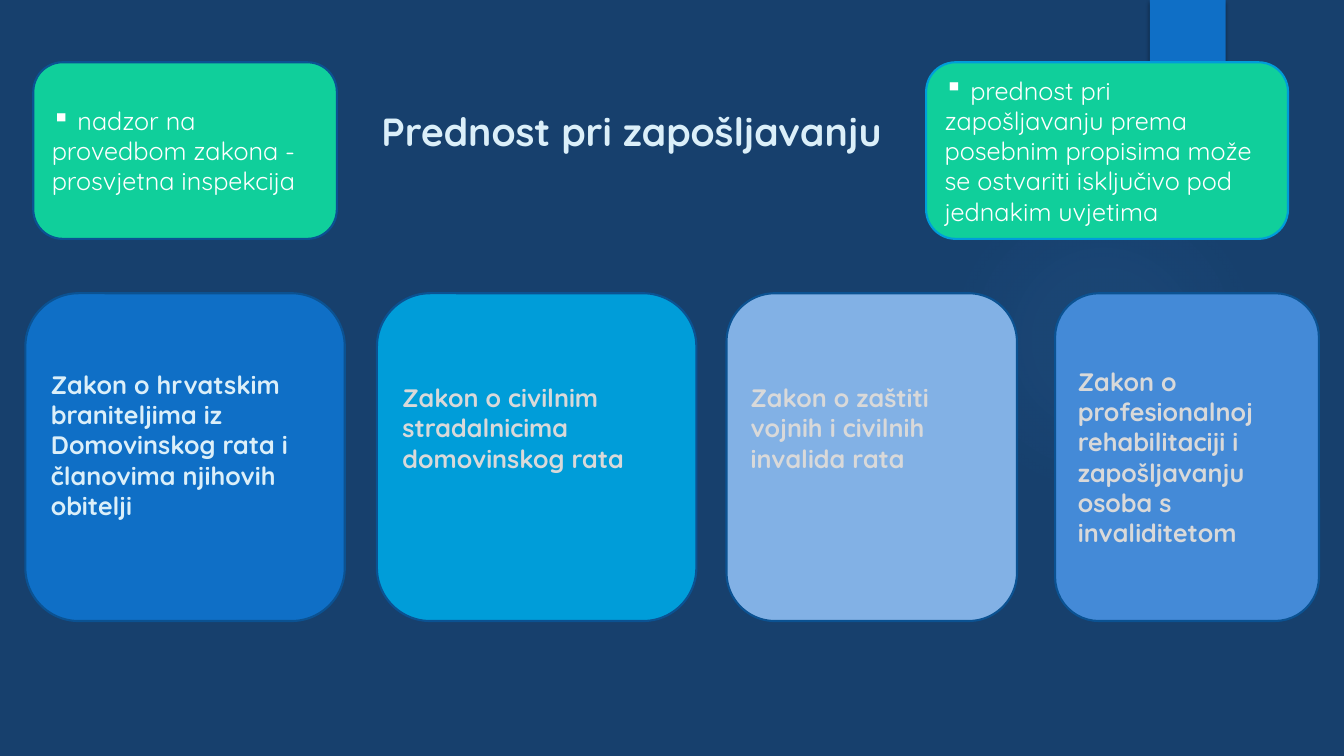
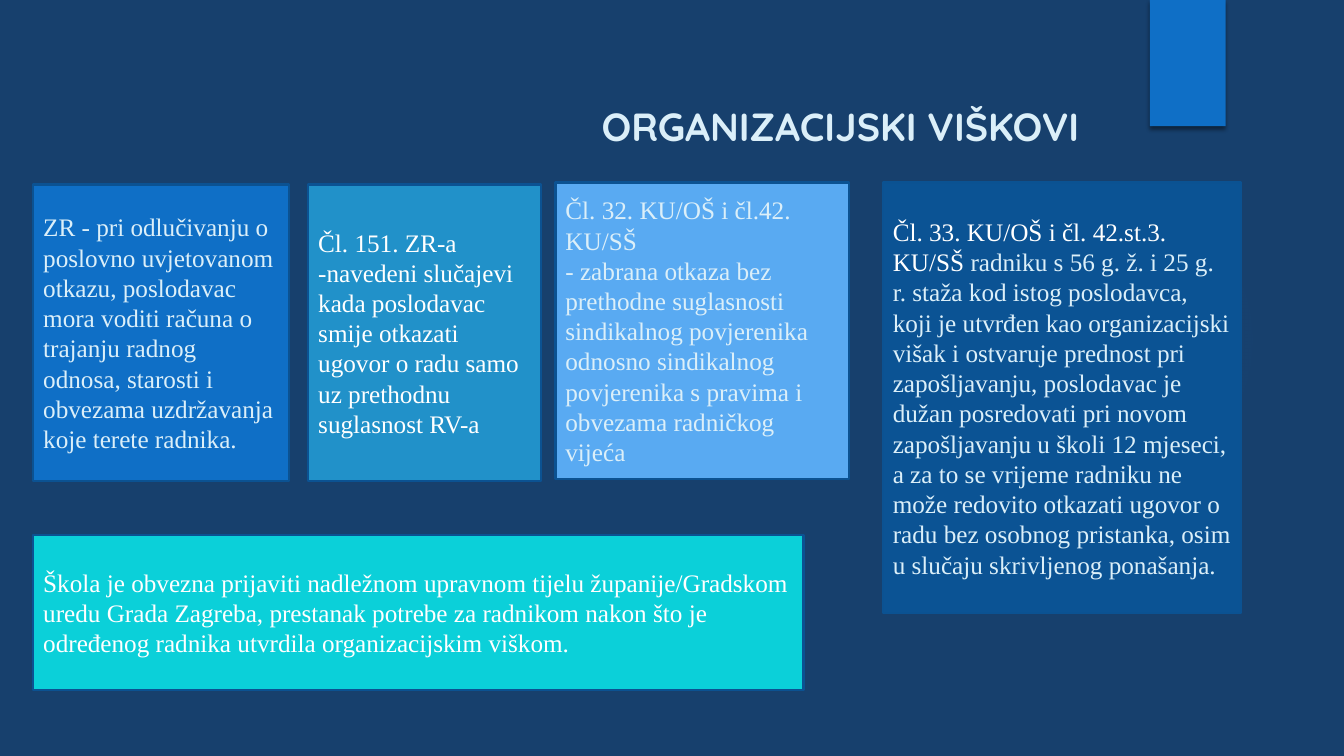
import pptx
import pptx.dml.color
import pptx.enum.shapes
import pptx.enum.text
import pptx.oxml
import pptx.oxml.ns
import pptx.util

Cm = pptx.util.Cm
Pt = pptx.util.Pt
Shapes = pptx.enum.shapes.MSO_SHAPE
Anchor = pptx.enum.text.MSO_ANCHOR
Align = pptx.enum.text.PP_ALIGN

COLOURS = {
    "night": "17406D", "blue": "0F6FC6", "edge": "0B5292", "cyan": "009DD9",
    "pale": "82B1E5", "medium": "448AD7", "green": "10CF9B", "ice": "DBEFF9",
    "grey": "D9D9D9", "white": "FFFFFF", "steel": "2191C9", "sky": "59AAF2",
    "deep": "0B5394", "turquoise": "0BD0D9",
}
TITLE = {"name": "Quicksand", "size": Pt(28), "bold": True}
NOTE = {"name": "Quicksand", "size": Pt(18), "bold": False}
LAW = {"name": "Quicksand", "size": Pt(18), "bold": True}
ARTICLE = {"name": "Times New Roman", "size": Pt(18), "bold": False}


class Deck:
    """Hold the shared style and the current slide."""

    def __init__(self):
        self.presentation = pptx.Presentation()
        self.presentation.slide_width = Cm(33.87)
        self.presentation.slide_height = Cm(19.05)
        self.paint(self.presentation.slide_master.background.fill, "night")
        self.slide = None

    def colour(self, name):
        return pptx.dml.color.RGBColor.from_string(COLOURS[name])

    def paint(self, fill, name):
        fill.solid()
        fill.fore_color.rgb = self.colour(name)

    def add_slide(self, title, position):
        layout = self.presentation.slide_layouts.get_by_name("Title Only")
        self.slide = self.presentation.slides.add_slide(layout)
        self.add_glow()
        self.add_tab()
        shape = self.slide.shapes.title
        for name, value in zip(("left", "top", "width", "height"), position):
            setattr(shape, name, Cm(value))
        frame = shape.text_frame
        frame.auto_size = pptx.enum.text.MSO_AUTO_SIZE.NONE
        frame.vertical_anchor = Anchor.TOP
        self.set_text(frame.paragraphs[0], [(title, "ice")], TITLE, Align.CENTER)

    def add_plain(self, kind, position):
        shape = self.slide.shapes.add_shape(kind, *map(Cm, position))
        shape.shadow.inherit = False
        shape.line.fill.background()
        return shape

    def add_glow(self):
        shape = self.add_plain(Shapes.OVAL, (23.9, 4.65, 7.82, 7.82))
        shape.fill.background()
        stops = "".join(
            f'<a:gs pos="{place}000"><a:srgbClr val="{COLOURS["medium"]}">'
            f'<a:alpha val="{alpha}000"/></a:srgbClr></a:gs>'
            for place, alpha in ((0, 7), (36, 6), (69, 0)))
        gradient = pptx.oxml.parse_xml(
            f'<a:gradFill {pptx.oxml.ns.nsdecls("a")}><a:gsLst>{stops}</a:gsLst>'
            '<a:path path="circle"><a:fillToRect l="50000" t="50000" r="50000" '
            'b="50000"/></a:path></a:gradFill>')
        properties = shape._element.spPr
        properties.replace(properties.find(pptx.oxml.ns.qn("a:noFill")), gradient)

    def add_tab(self):
        shape = self.add_plain(Shapes.RECTANGLE, (28.98, 0, 1.91, 3.18))
        self.paint(shape.fill, "blue")
        effects = shape._element.spPr.find(pptx.oxml.ns.qn("a:effectLst"))
        effects.append(pptx.oxml.parse_xml(
            f'<a:outerShdw {pptx.oxml.ns.nsdecls("a")} blurRad="{Pt(3)}" '
            f'dist="{Pt(2)}" dir="5400000" rotWithShape="0">'
            '<a:srgbClr val="000000"><a:alpha val="45000"/></a:srgbClr></a:outerShdw>'))

    def add_box(self, kind, position, fill, paragraphs, style,
                edge="edge", bullet=None, lift=0.13):
        shape = self.add_plain(kind, position)
        self.paint(shape.fill, fill)
        self.paint(shape.line.fill, edge)
        shape.line.width = Pt(1.5)
        frame = shape.text_frame
        settings = {"word_wrap": True, "vertical_anchor": Anchor.MIDDLE,
                    "margin_bottom": Cm(lift)}
        for name, value in settings.items():
            setattr(frame, name, value)
        for index, runs in enumerate(paragraphs):
            paragraph = frame.add_paragraph() if index else frame.paragraphs[0]
            self.set_text(paragraph, runs, style, Align.LEFT, bullet)

    def set_text(self, paragraph, runs, style, alignment, bullet=None):
        paragraph.alignment = alignment
        if bullet:
            properties = paragraph._p.get_or_add_pPr()
            properties.set("marL", "0")
            properties.set("indent", "0")
            properties.append(pptx.oxml.parse_xml(
                f'<a:buChar {pptx.oxml.ns.nsdecls("a")} char="{bullet}"/>'))
        for text, colour in runs:
            run = paragraph.add_run()
            run.text = text
            for name, value in style.items():
                setattr(run.font, name, value)
            run.font.color.rgb = self.colour(colour)


def build_priority(deck):
    """Build the slide on employment priority."""
    deck.add_slide("Prednost pri zapošljavanju", (3.48, 2.57, 24.87, 3.89))
    notes = (
        (0.84, 7.65, "edge", " nadzor na provedbom zakona - prosvjetna inspekcija"),
        (23.34, 9.12, "cyan", " prednost pri zapošljavanju prema posebnim propisima "
         "može se ostvariti isključivo pod jednakim uvjetima"),
    )
    for left, width, edge, text in notes:
        deck.add_box(Shapes.ROUNDED_RECTANGLE, (left, 1.57, width, 4.45), "green",
                     [[(text, "white")]], NOTE, edge=edge, bullet="▪")
    laws = (
        (0.64, 8.05, "blue", "ice", 0.75, "Zakon o hrvatskim braniteljima iz "
         "Domovinskog rata i članovima njihovih obitelji"),
        (9.5, 8.05, "cyan", "grey", 1.6,
         "Zakon o civilnim stradalnicima domovinskog rata"),
        (18.31, 7.32, "pale", "grey", 1.6,
         "Zakon o zaštiti vojnih i civilnih invalida rata"),
        (26.59, 6.65, "medium", "grey", 0.13, "Zakon o profesionalnoj "
         "rehabilitaciji i zapošljavanju osoba s invaliditetom"),
    )
    for left, width, fill, colour, lift, text in laws:
        deck.add_box(Shapes.ROUNDED_RECTANGLE, (left, 7.39, width, 8.26), fill,
                     [[(text, colour)]], LAW, lift=lift)


def build_redundancy(deck):
    """Build the slide on organisational redundancy."""
    deck.add_slide("ORGANIZACIJSKI VIŠKOVI", (12.68, 2.44, 17, 2.1))
    articles = (
        ((0.84, 4.65, 6.45, 7.47), "blue", [[(
            "ZR - pri odlučivanju o poslovno uvjetovanom otkazu, poslodavac mora "
            "voditi računa o trajanju radnog odnosa, starosti i obvezama "
            "uzdržavanja koje terete radnika.", "ice")]]),
        ((7.77, 4.65, 5.87, 7.47), "steel", [
            [("Čl. 151. ZR-a", "white")],
            [("-navedeni slučajevi kada poslodavac smije otkazati ugovor o radu "
              "samo uz prethodnu suglasnost RV-a", "white")]]),
        ((14, 4.6, 7.39, 7.47), "sky", [
            [("Čl. 32. KU/OŠ i čl.42. KU/SŠ", "ice")],
            [("- zabrana otkaza bez prethodne suglasnosti sindikalnog povjerenika "
              "odnosno sindikalnog povjerenika s pravima i obvezama radničkog "
              "vijeća", "ice")]]),
        ((22.25, 4.6, 9.02, 10.85), "deep", [[
            ("Čl. 33. KU/OŠ i čl. 42.st.3. KU/SŠ ", "white"),
            ("radniku s 56 g. ž. i 25 g. r. staža kod istog poslodavca, koji je "
             "utvrđen kao organizacijski višak i ostvaruje prednost pri "
             "zapošljavanju, poslodavac je dužan posredovati pri novom "
             "zapošljavanju u školi 12 mjeseci, a za to se vrijeme radniku ne može "
             "redovito otkazati ugovor o radu bez osobnog pristanka, osim u "
             "slučaju skrivljenog ponašanja.", "ice")]]),
        ((0.84, 13.49, 19.41, 3.89), "turquoise", [[(
            "Škola je obvezna prijaviti nadležnom upravnom tijelu "
            "županije/Gradskom uredu Grada Zagreba, prestanak potrebe za radnikom "
            "nakon što je određenog radnika utvrdila organizacijskim viškom.",
            "white")]]),
    )
    for position, fill, paragraphs in articles:
        deck.add_box(Shapes.RECTANGLE, position, fill, paragraphs, ARTICLE)


def main():
    """Build and save the presentation."""
    deck = Deck()
    build_priority(deck)
    build_redundancy(deck)
    deck.presentation.save("out.pptx")


if __name__ == "__main__":
    main()
